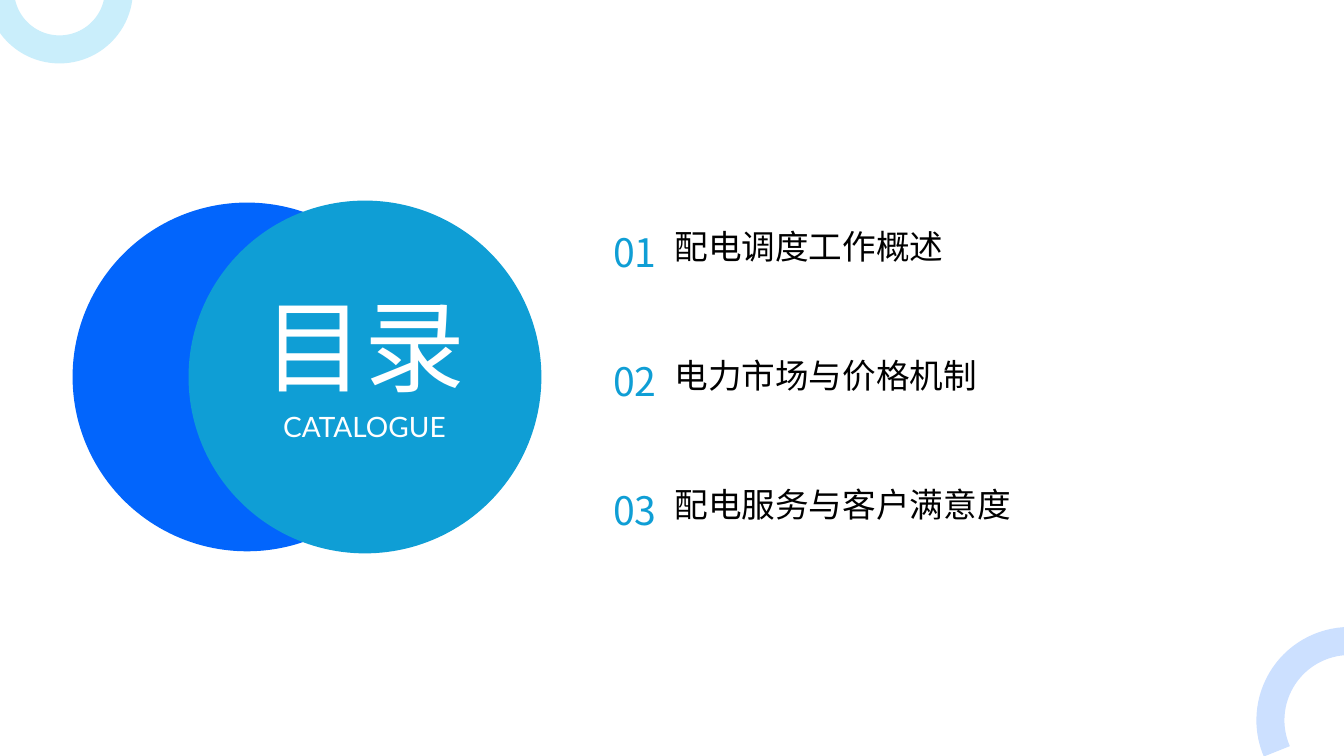
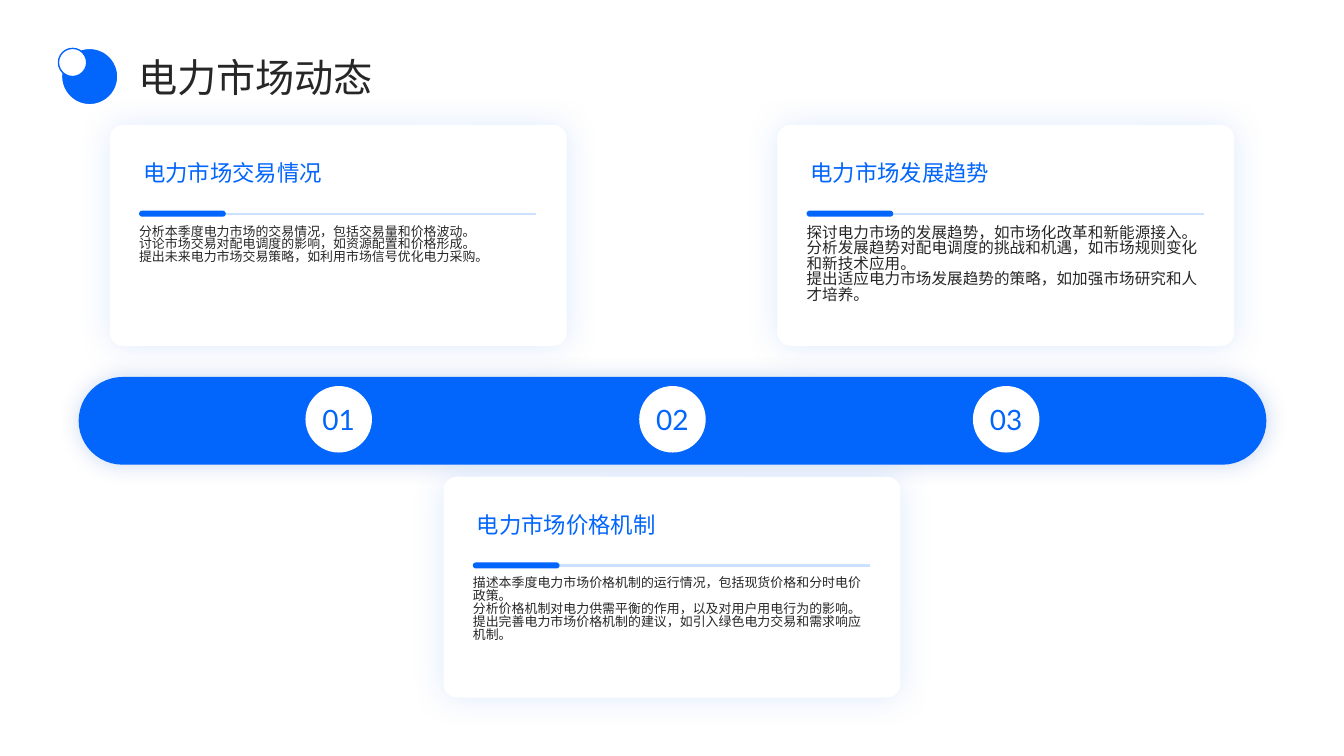
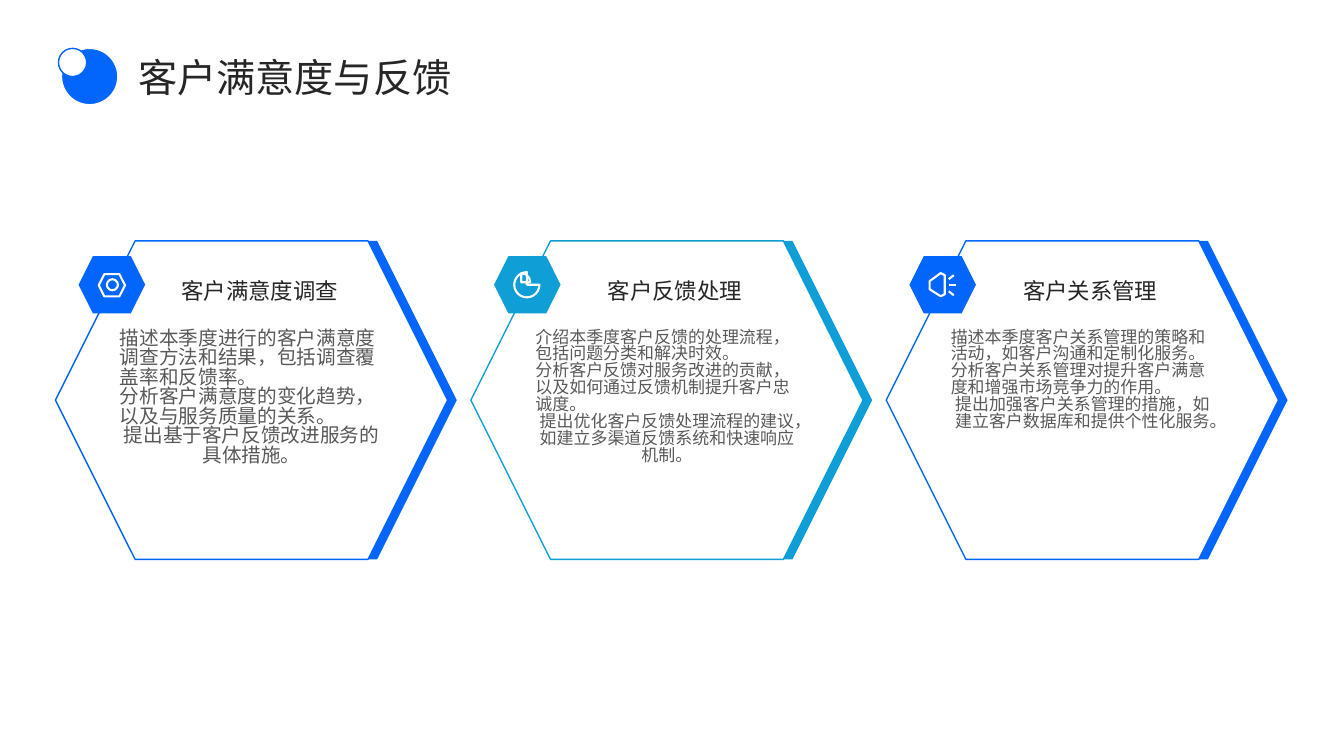
"""Build three slides: a catalogue, a market timeline and customer hexagons."""
from lxml.etree import SubElement
from pptx import Presentation
from pptx.dml.color import RGBColor
from pptx.enum.shapes import MSO_CONNECTOR, MSO_SHAPE
from pptx.enum.text import MSO_ANCHOR, MSO_AUTO_SIZE, PP_ALIGN
from pptx.oxml.ns import qn
from pptx.util import Pt

PX = 9144
BLUE = RGBColor(0x02, 0x65, 0xFC)
CYAN = RGBColor(0x0F, 0x9E, 0xD5)
NAVY = RGBColor(0x01, 0x4C, 0xBD)
PALE_CYAN = RGBColor(0xCA, 0xEE, 0xFB)
PALE_BLUE = RGBColor(0xCC, 0xE0, 0xFF)
WHITE = RGBColor(0xFF, 0xFF, 0xFF)
BLACK = RGBColor(0x00, 0x00, 0x00)
DARK = RGBColor(0x26, 0x26, 0x26)
GRAY = RGBColor(0x59, 0x59, 0x59)
LATIN_FONT = "Lato"
CHINESE_FONT = "Noto Sans CJK SC"
LEFT, CENTER = PP_ALIGN.LEFT, PP_ALIGN.CENTER
TOP, MIDDLE = MSO_ANCHOR.TOP, MSO_ANCHOR.MIDDLE

CHAPTERS = ["配电调度工作概述", "电力市场与价格机制", "配电服务与客户满意度"]

MARKET_TITLE = "电力市场动态"
MARKET_CARDS = [
    ("电力市场交易情况", 124, 9.2, [
        "分析本季度电力市场的交易情况，包括交易量和价格波动。",
        "讨论市场交易对配电调度的影响，如资源配置和价格形成。",
        "提出未来电力市场交易策略，如利用市场信号优化电力采购。"]),
    ("电力市场价格机制", 473, 9.2, [
        "描述本季度电力市场价格机制的运行情况，包括现货价格和分时电价政策。",
        "分析价格机制对电力供需平衡的作用，以及对用户用电行为的影响。",
        "提出完善电力市场价格机制的建议，如引入绿色电力交易和需求响应机制。"]),
    ("电力市场发展趋势", 124, 11.1, [
        "探讨电力市场的发展趋势，如市场化改革和新能源接入。",
        "分析发展趋势对配电调度的挑战和机遇，如市场规则变化和新技术应用。",
        "提出适应电力市场发展趋势的策略，如加强市场研究和人才培养。"]),
]

CUSTOMER_TITLE = "客户满意度与反馈"
CUSTOMER_TOPICS = [
    ("客户满意度调查", BLUE, 14, [
        "描述本季度进行的客户满意度调查方法和结果，包括调查覆盖率和反馈率。",
        "分析客户满意度的变化趋势，以及与服务质量的关系。",
        "提出基于客户反馈改进服务的具体措施。"]),
    ("客户反馈处理", CYAN, 12.1, [
        "介绍本季度客户反馈的处理流程，包括问题分类和解决时效。",
        "分析客户反馈对服务改进的贡献，以及如何通过反馈机制提升客户忠诚度。",
        "提出优化客户反馈处理流程的建议，如建立多渠道反馈系统和快速响应机制。"]),
    ("客户关系管理", BLUE, 12.1, [
        "描述本季度客户关系管理的策略和活动，如客户沟通和定制化服务。",
        "分析客户关系管理对提升客户满意度和增强市场竞争力的作用。",
        "提出加强客户关系管理的措施，如建立客户数据库和提供个性化服务。"]),
]
SPEAKER_OUTLINE = [(20, 25), (31, 17), (35, 19), (35, 38), (31, 40), (20, 33)]
SOUND_RAYS = [(39, 23, 44, 19), (39, 29, 46, 29), (39, 35, 44, 39)]


def emu(*lengths):
    return [length * PX for length in lengths]


def style_shape(shape, fill=None, line=None, width=1):
    shape.shadow.inherit = False
    if fill is None:
        shape.fill.background()
    else:
        shape.fill.solid()
        shape.fill.fore_color.rgb = fill
    if line is None:
        shape.line.fill.background()
    else:
        shape.line.color.rgb = line
        shape.line.width = Pt(width)
    return shape


def add_shape(slide, kind, box, fill=None, line=None, width=1, adjustments=()):
    shape = slide.shapes.add_shape(kind, *emu(*box))
    for index, value in enumerate(adjustments):
        shape.adjustments[index] = value
    return style_shape(shape, fill, line, width)


def angles(*degrees):
    return [degree * 0.6 for degree in degrees]


def add_glow(shape, color, opacity, blur):
    effects = shape._element.spPr.find(qn("a:effectLst"))
    shadow = SubElement(effects, qn("a:outerShdw"), blurRad=str(Pt(blur)),
                        dist="0", dir="0", algn="ctr", rotWithShape="0")
    shade = SubElement(shadow, qn("a:srgbClr"), val=str(color))
    SubElement(shade, qn("a:alpha"), val=str(opacity * 1000))


def add_line(slide, ends, color, width):
    connector = slide.shapes.add_connector(MSO_CONNECTOR.STRAIGHT, *emu(*ends))
    connector.line.color.rgb = color
    connector.line.width = Pt(width)
    SubElement(connector._element.spPr, qn("a:effectLst"))


def write_text(shape, lines, size, color, font=CHINESE_FONT, align=LEFT,
               anchor=MIDDLE, spacing=None, last_align=None):
    frame = shape.text_frame
    frame.word_wrap = True
    frame.auto_size = MSO_AUTO_SIZE.NONE
    frame.vertical_anchor = anchor
    frame.margin_left = frame.margin_right = 0
    frame.margin_top = frame.margin_bottom = 0
    for index, line in enumerate(lines):
        paragraph = frame.add_paragraph() if index else frame.paragraphs[0]
        paragraph.alignment = align
        if spacing:
            paragraph.line_spacing = spacing
        run = paragraph.add_run()
        run.text = line
        run.font.size = Pt(size)
        run.font.color.rgb = color
        run.font.name = font
        SubElement(run._r.get_or_add_rPr(), qn("a:ea"), typeface=CHINESE_FONT)
    if last_align is not None:
        paragraph.alignment = last_align


def add_text(slide, box, lines, size, color, **options):
    write_text(slide.shapes.add_textbox(*emu(*box)), lines, size, color, **options)


def place_title(slide, box, text, size, color, **options):
    title = slide.shapes.title
    title.left, title.top, title.width, title.height = emu(*box)
    write_text(title, [text], size, color, **options)
    slide.shapes._spTree.append(title._element)


def add_slide(presentation):
    return presentation.slides.add_slide(presentation.slide_layouts[5])


def add_content_slide(presentation, title):
    slide = add_slide(presentation)
    place_title(slide, (137, 51, 1188, 51), title, 28, DARK)
    add_shape(slide, MSO_SHAPE.OVAL, (61, 48, 56, 56), BLUE, WHITE)
    add_shape(slide, MSO_SHAPE.OVAL, (58, 48, 28, 28), WHITE, BLUE)
    return slide


def build_catalogue(presentation):
    slide = add_slide(presentation)
    add_shape(slide, MSO_SHAPE.OVAL, (72, 201, 346, 346), BLUE)
    add_shape(slide, MSO_SHAPE.OVAL, (187, 199, 350, 350), CYAN)
    upper_ring = add_shape(slide, MSO_SHAPE.ARC, (0, -69, 118, 118), None,
                           PALE_CYAN, 20, angles(107.8, 0))
    lower_ring = add_shape(slide, MSO_SHAPE.ARC, (1260, 636, 157, 157), None,
                           PALE_BLUE, 20, angles(107.8, 23.22))
    upper_ring.rotation = lower_ring.rotation = 180
    lower_ring._element.spPr.xfrm.set("flipV", "1")
    place_title(slide, (229, 286, 265, 110), "目录", 72, WHITE,
                font=LATIN_FONT, align=CENTER)
    add_text(slide, (233, 407, 257, 31), ["CATALOGUE"], 20, WHITE,
             font=LATIN_FONT, align=CENTER)
    for index, chapter in enumerate(CHAPTERS):
        top = 226 + 128 * index
        add_text(slide, (608, top, 61, 47), [f"{index + 1:02}"], 28, CYAN)
        add_text(slide, (669, top + 3, 591, 98), [chapter], 24, BLACK,
                 anchor=TOP, spacing=0.9)


def build_market(presentation):
    slide = add_content_slide(presentation, MARKET_TITLE)
    band = add_shape(slide, MSO_SHAPE.ROUNDED_RECTANGLE, (78, 374, 1178, 87),
                     BLUE, adjustments=[0.5])
    add_glow(band, NAVY, 20, 15)
    for index, (heading, top, size, lines) in enumerate(MARKET_CARDS):
        left = 109 + 331 * index
        inner = left + 29
        card = add_shape(slide, MSO_SHAPE.ROUNDED_RECTANGLE,
                         (left, top, 453, 219), WHITE, adjustments=[0.06])
        add_glow(card, BLUE, 13, 24)
        add_text(slide, (left + 33, top + 12, 389, 70), [heading], 16, BLUE)
        add_text(slide, (inner, top + 100, 394, 116), lines, size, DARK,
                 anchor=TOP, spacing=0.83)
        add_line(slide, (inner, top + 88, inner + 394, top + 88), PALE_BLUE, 1.5)
        add_shape(slide, MSO_SHAPE.ROUNDED_RECTANGLE, (inner, top + 85, 86, 6),
                  BLUE, adjustments=[0.5])
        circle = add_shape(slide, MSO_SHAPE.OVAL, (left + 194, 383, 66, 66), WHITE)
        write_text(circle, [f"{index + 1:02}"], 20, BLUE,
                   font=LATIN_FONT, align=CENTER)


def draw_nut(slide, left, top):
    add_shape(slide, MSO_SHAPE.HEXAGON, (left + 20, top + 18, 26, 22),
              None, WHITE, 1.5)
    add_shape(slide, MSO_SHAPE.OVAL, (left + 28, top + 23, 11, 11),
              None, WHITE, 1.5)


def draw_pie(slide, left, top):
    add_shape(slide, MSO_SHAPE.PIE, (left + 20, top + 16, 25, 25),
              None, WHITE, 1.5, angles(0, 270))
    add_shape(slide, MSO_SHAPE.PIE, (left + 18, top + 17, 18, 18),
              None, WHITE, 1.5, angles(270, 0))


def draw_speaker(slide, left, top):
    points = [(left + x, top + y) for x, y in SPEAKER_OUTLINE]
    builder = slide.shapes.build_freeform(*points[0], scale=PX)
    builder.add_line_segments(points[1:], close=True)
    style_shape(builder.convert_to_shape(), None, WHITE, 1.5)
    for x1, y1, x2, y2 in SOUND_RAYS:
        add_line(slide, (left + x1, top + y1, left + x2, top + y2), WHITE, 1.5)


def build_customers(presentation):
    slide = add_content_slide(presentation, CUSTOMER_TITLE)
    icons = [draw_nut, draw_pie, draw_speaker]
    for index, (heading, color, size, lines) in enumerate(CUSTOMER_TOPICS):
        left, top = 55 + 412 * index, 239
        add_shape(slide, MSO_SHAPE.HEXAGON, (left + 9, top, 389, 316), color)
        add_shape(slide, MSO_SHAPE.HEXAGON, (left, top, 389, 316), WHITE, color)
        add_text(slide, (left + 64, top + 88, 261, 206), lines, size, GRAY,
                 anchor=TOP, spacing=0.83, last_align=CENTER)
        add_text(slide, (left + 94, top + 15, 217, 69), [heading], 16, DARK,
                 align=CENTER)
        add_shape(slide, MSO_SHAPE.HEXAGON, (left + 23, top + 15, 66, 57), color)
        icons[index](slide, left + 23, top + 15)


def main():
    presentation = Presentation()
    presentation.slide_width, presentation.slide_height = emu(1333, 750)
    build_catalogue(presentation)
    build_market(presentation)
    build_customers(presentation)
    presentation.save("out.pptx")


if __name__ == "__main__":
    main()
